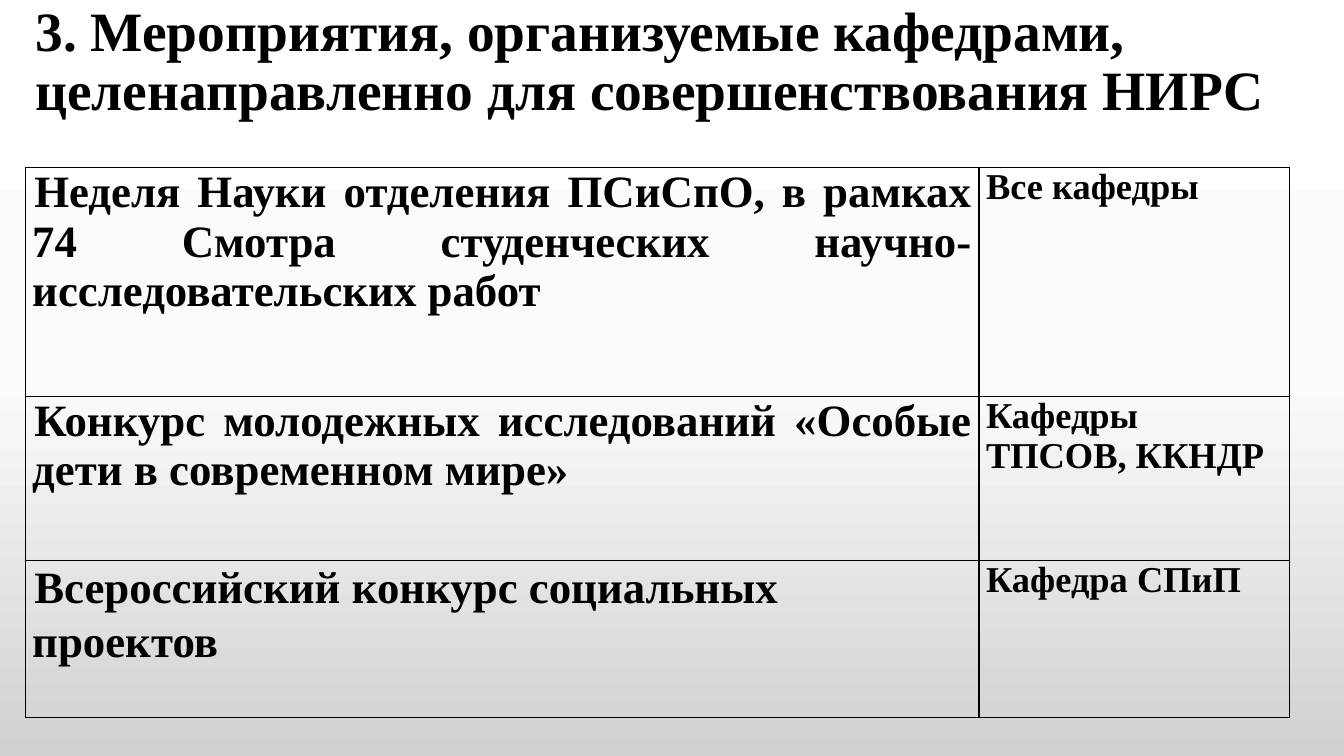
import copy

import lxml.etree
import pptx
import pptx.dml.color
import pptx.enum.text
import pptx.oxml.ns
import pptx.util

SLIDE_WIDTH = pptx.util.Inches(13.33)
SLIDE_HEIGHT = pptx.util.Inches(7.5)
FONT = "Times New Roman"
COLORS = {"text": "000000", "border": "000000",
          "top": "FFFFFF", "middle": "FBFBFB", "bottom": "D1D1D1"}
ALIGN = pptx.enum.text.PP_ALIGN

TITLE = "3. Мероприятия, организуемые кафедрами, целенаправленно для совершенствования НИРС"
EVENTS = [
    ("Неделя Науки отделения ПСиСпО, в рамках 74 Смотра студенческих "
     "научно-исследовательских работ", "Все кафедры"),
    ("Конкурс молодежных исследований «Особые дети в современном мире»",
     "Кафедры ТПСОВ, ККНДР"),
    ("Всероссийский конкурс социальных проектов", "Кафедра СПиП"),
]
COLUMN_WIDTHS = (9.46, 3.08)
ROW_HEIGHTS = (2.27, 1.63, 1.56)


def rgb(name):
    return pptx.dml.color.RGBColor.from_string(COLORS[name])


def paint_background(slide):
    fill = slide.background.fill
    fill.gradient()
    fill.gradient_angle = 270
    stop_list = fill._fill._gradFill.gsLst
    stop_list.insert(1, copy.deepcopy(stop_list[0]))
    stops = zip(fill.gradient_stops, ("top", "middle", "bottom"), (0, 0.5, 1))
    for stop, name, position in stops:
        stop.color.rgb = rgb(name)
        stop.position = position


def format_runs(paragraph, size):
    for run in paragraph.runs:
        run.font.name = FONT
        run.font.size = pptx.util.Pt(size)
        run.font.bold = True
        run.font.color.rgb = rgb("text")


def add_title(slide, left, top, width, height):
    title = slide.shapes.title
    title.left, title.top, title.width, title.height = left, top, width, height
    frame = title.text_frame
    frame.text = TITLE
    frame.word_wrap = True
    frame.auto_size = pptx.enum.text.MSO_AUTO_SIZE.NONE
    frame.vertical_anchor = pptx.enum.text.MSO_ANCHOR.MIDDLE
    paragraph = frame.paragraphs[0]
    paragraph.alignment = ALIGN.LEFT
    paragraph.line_spacing = 0.9
    format_runs(paragraph, 39.6)


def add_borders(cell):
    properties = cell._tc.get_or_add_tcPr()
    qn = pptx.oxml.ns.qn
    for index, side in enumerate(("lnL", "lnR", "lnT", "lnB")):
        line = lxml.etree.Element(qn(f"a:{side}"), w=str(pptx.util.Pt(1)))
        fill = lxml.etree.SubElement(line, qn("a:solidFill"))
        lxml.etree.SubElement(fill, qn("a:srgbClr"), val=COLORS["border"])
        properties.insert(index, line)


def fill_cell(cell, text, size, alignment, indent=0, spacing=None):
    cell.fill.background()
    cell.margin_left = cell.margin_right = pptx.util.Inches(0.07)
    cell.margin_top = cell.margin_bottom = 0
    add_borders(cell)
    cell.text_frame.text = text
    paragraph = cell.text_frame.paragraphs[0]
    paragraph.alignment = alignment
    paragraph.line_spacing = spacing
    paragraph._p.get_or_add_pPr().set("indent", str(pptx.util.Inches(indent)))
    format_runs(paragraph, size)


def add_events_table(slide, left, top, width, height):
    frame = slide.shapes.add_table(len(EVENTS), len(COLUMN_WIDTHS),
                                   left, top, width, height)
    table = frame.table
    table.first_row = table.horz_banding = False
    for column, share in zip(table.columns, COLUMN_WIDTHS):
        column.width = int(width * share / sum(COLUMN_WIDTHS))
    for row, share in zip(table.rows, ROW_HEIGHTS):
        row.height = int(height * share / sum(ROW_HEIGHTS))
    for index, (event, department) in enumerate(EVENTS):
        is_last = index == len(EVENTS) - 1
        fill_cell(table.cell(index, 0), event, 32,
                  ALIGN.LEFT if is_last else ALIGN.JUSTIFY,
                  indent=0.02, spacing=1.07 if is_last else None)
        fill_cell(table.cell(index, 1), department, 26, ALIGN.JUSTIFY)


def main():
    presentation = pptx.Presentation()
    presentation.slide_width = SLIDE_WIDTH
    presentation.slide_height = SLIDE_HEIGHT
    slide = presentation.slides.add_slide(presentation.slide_layouts[5])
    paint_background(slide)
    left = pptx.util.Inches(0.25)
    add_title(slide, left, 0, int(SLIDE_WIDTH * 0.95), pptx.util.Inches(1.25))
    add_events_table(slide, left, pptx.util.Inches(1.66),
                     pptx.util.Inches(sum(COLUMN_WIDTHS)),
                     pptx.util.Inches(sum(ROW_HEIGHTS)))
    presentation.save("out.pptx")


if __name__ == "__main__":
    main()
